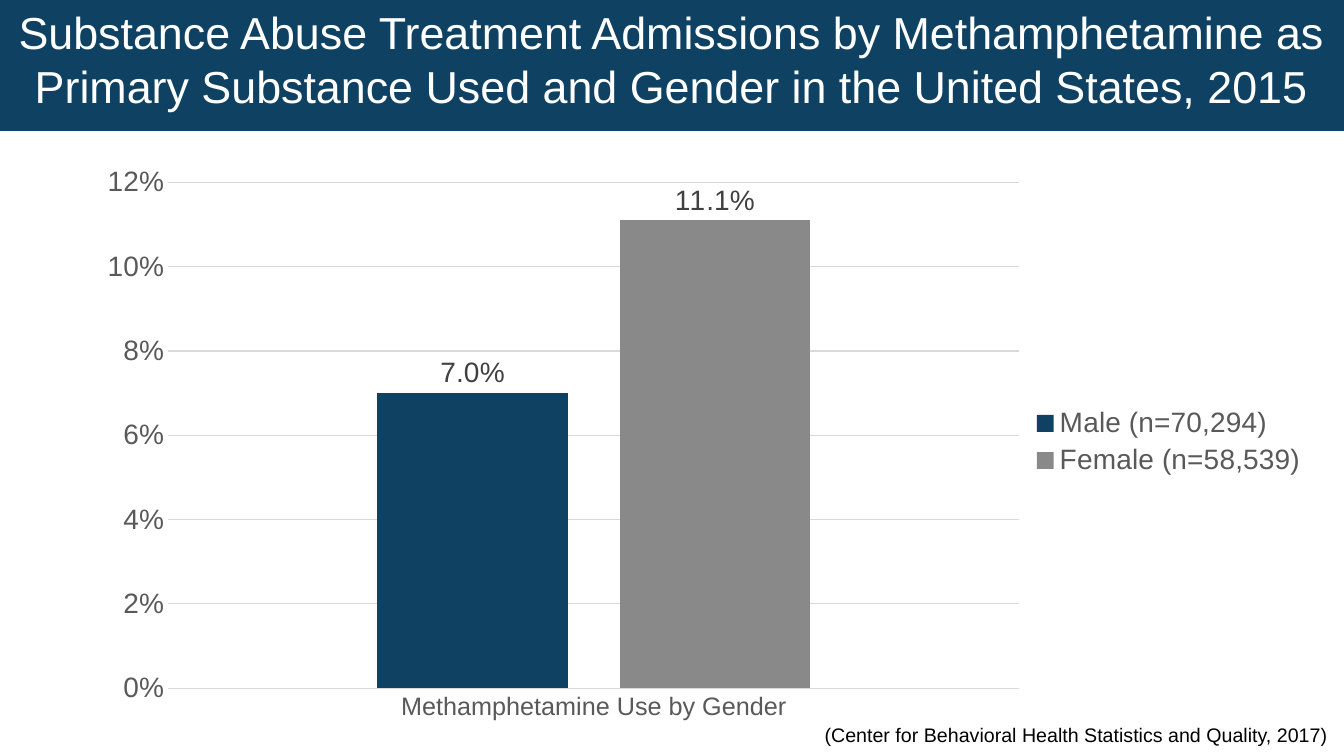
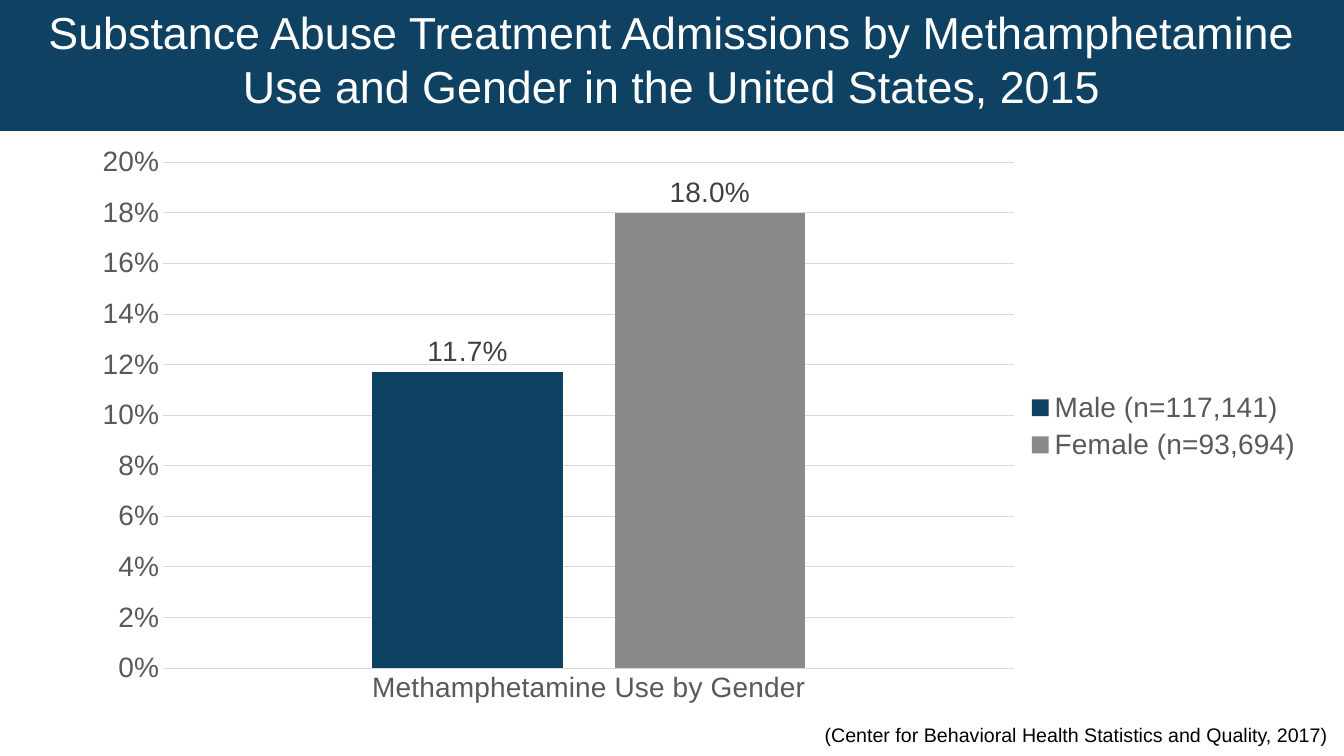
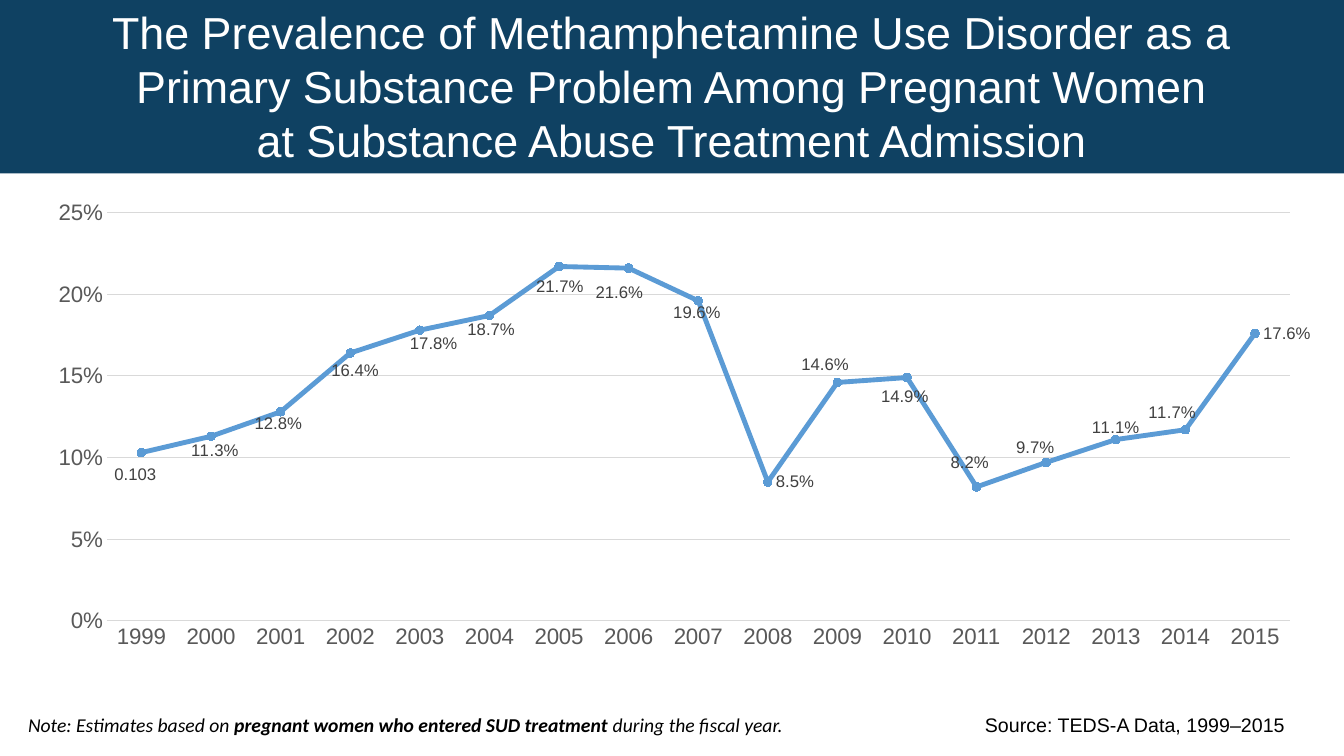
from lxml import etree
from pptx import Presentation
from pptx.chart.data import CategoryChartData
from pptx.dml.color import RGBColor
from pptx.enum.chart import (XL_CHART_TYPE, XL_LABEL_POSITION,
                             XL_LEGEND_POSITION, XL_MARKER_STYLE, XL_TICK_MARK)
from pptx.enum.shapes import MSO_SHAPE
from pptx.enum.text import MSO_ANCHOR, PP_ALIGN
from pptx.oxml.ns import qn
from pptx.util import Pt

PX = 9144  # 100 px to the inch
WIDTH, HEIGHT = 1333, 750

NAVY = RGBColor(0x0F, 0x41, 0x62)
GRAY = RGBColor(0x89, 0x89, 0x89)
BLUE = RGBColor(0x5B, 0x9B, 0xD5)
WHITE = RGBColor(0xFF, 0xFF, 0xFF)
BLACK = RGBColor(0, 0, 0)
AXIS = RGBColor(0x59, 0x59, 0x59)
LABEL = RGBColor(0x40, 0x40, 0x40)
GRID = RGBColor(0xD9, 0xD9, 0xD9)

COLUMN = XL_CHART_TYPE.COLUMN_CLUSTERED
LINE = XL_CHART_TYPE.LINE_MARKERS
ABOVE = XL_LABEL_POSITION.OUTSIDE_END
BESIDE = XL_LABEL_POSITION.RIGHT
LEGEND_RIGHT = XL_LEGEND_POSITION.RIGHT
CIRCLE = XL_MARKER_STYLE.CIRCLE
NO_TICK = XL_TICK_MARK.NONE
RECT = MSO_SHAPE.RECTANGLE
TOP = MSO_ANCHOR.TOP
CENTER = PP_ALIGN.CENTER

CITE = "(Center for Behavioral Health Statistics and Quality, 2017)"
RATES = [0.103, 0.113, 0.128, 0.164, 0.178, 0.187, 0.217, 0.216, 0.196,
         0.085, 0.146, 0.149, 0.082, 0.097, 0.111, 0.117, 0.176]
# Label shifts in px from the place to the right of each marker
SHIFTS = {0: (-35, 22), 1: (-28, 14), 2: (-34, 12), 3: (-27, 18),
          4: (-18, 13), 5: (-30, 14), 6: (-31, 20), 7: (-41, 24),
          8: (-33, 12), 10: (-44, -18), 11: (-34, 19), 12: (-34, -24),
          13: (-38, -15), 14: (-32, -12), 15: (-45, -17)}


def set_font(font, size, color, face="Arial"):
    font.size = Pt(size)
    font.name = face
    font.color.rgb = color


def scale(box):
    return [n * PX for n in box]


def add_band(slide, title, height):
    band = slide.shapes.add_shape(RECT, *scale((0, 0, WIDTH, height)))
    band.shadow.inherit = False
    band.fill.solid()
    band.fill.fore_color.rgb = NAVY
    band.line.fill.background()
    frame = band.text_frame
    frame.word_wrap = True
    frame.vertical_anchor = TOP
    para = frame.paragraphs[0]
    para.text = title
    para.alignment = CENTER
    set_font(para.font, 32, WHITE)


def add_note(slide, box, parts, face="Arial"):
    """Add a line of text; every second part is bold."""
    frame = slide.shapes.add_textbox(*scale(box)).text_frame
    frame.word_wrap = True
    para = frame.paragraphs[0]
    for i, part in enumerate(parts):
        run = para.add_run()
        run.text = part
        if i % 2:
            run.font.bold = True
    set_font(para.font, 14, BLACK, face)
    return para


def make_layout(**values):
    layout = etree.Element(qn("c:layout"))
    manual = etree.SubElement(layout, qn("c:manualLayout"))
    for tag, value in values.items():
        etree.SubElement(manual, qn("c:" + tag)).set("val", str(value))
    return layout


def place_plot(chart, box, plot):
    area = chart._chartSpace.chart.plotArea
    for old in area.findall(qn("c:layout")):
        area.remove(old)
    x, y, w, h = plot
    wide, high = box[2:]
    area.insert(0, make_layout(layoutTarget="inner", xMode="edge",
                               yMode="edge", x=x / wide, y=y / high,
                               w=w / wide, h=h / high))


def style_axes(chart, sizes, top, step):
    cat, val = chart.category_axis, chart.value_axis
    for axis, size in zip((cat, val), sizes):
        axis.major_tick_mark = axis.minor_tick_mark = NO_TICK
        set_font(axis.tick_labels.font, size, AXIS)
    val.minimum_scale, val.maximum_scale, val.major_unit = 0, top, step
    val.tick_labels.number_format = "0%"
    val.tick_labels.number_format_is_linked = False
    val.has_major_gridlines = True
    val.format.line.fill.background()
    for line in (cat.format.line, val.major_gridlines.format.line):
        line.color.rgb = GRID
        line.width = Pt(0.75)


def add_labels(series, size, place):
    labels = series.data_labels
    labels.show_value = True
    labels.number_format = "0.0%"
    labels.number_format_is_linked = False
    labels.position = place
    set_font(labels.font, size, LABEL)
    for lead in series._element.iter(qn("c:showLeaderLines")):
        lead.set("val", "0")


def add_chart(slide, kind, box, plot, cats, rows, sizes, top, step):
    data = CategoryChartData(number_format="0.0%")
    data.categories = cats
    for name, values in rows:
        data.add_series(name, values)
    chart = slide.shapes.add_chart(kind, *scale(box), data).chart
    set_font(chart.font, 10, AXIS)
    chart.has_title = False
    chart.has_legend = False
    chart.plots[0].vary_by_categories = False
    place_plot(chart, box, plot)
    style_axes(chart, sizes, top, step)
    return chart


def add_columns(slide, box, plot, rows, sizes, top):
    cats = ["Methamphetamine Use by Gender"]
    chart = add_chart(slide, COLUMN, box, plot, cats, rows, sizes, top, 0.02)
    bars = chart.plots[0]
    bars.gap_width, bars.overlap = 219, -27
    for series, color in zip(bars.series, (NAVY, GRAY)):
        series.format.fill.solid()
        series.format.fill.fore_color.rgb = color
        add_labels(series, 20, ABOVE)
    chart.has_legend = True
    chart.legend.position = LEGEND_RIGHT
    chart.legend.include_in_layout = False
    set_font(chart.legend.font, 20, AXIS)


def shift_label(label, shift, box, text=None):
    if text:
        label.text_frame.text = text
        set_font(label.text_frame.paragraphs[0].runs[0].font, 12, LABEL)
    else:
        set_font(label.font, 12, LABEL)
    label.position = BESIDE
    x, y = shift
    label._get_or_add_dLbl().insert(
        1, make_layout(x=x / box[2], y=y / box[3]))


def add_trend(slide, box, plot):
    years = [str(year) for year in range(1999, 2016)]
    chart = add_chart(slide, LINE, box, plot, years, [("Series 1", RATES)],
                      (16, 16), 0.25, 0.05)
    series = chart.plots[0].series[0]
    series.smooth = False
    series.format.line.color.rgb = BLUE
    series.format.line.width = Pt(3.5)
    mark = series.marker
    mark.style, mark.size = CIRCLE, 6
    mark.format.fill.solid()
    mark.format.fill.fore_color.rgb = BLUE
    mark.format.line.color.rgb = BLUE
    add_labels(series, 12, BESIDE)
    for i, shift in SHIFTS.items():
        text = "0.103" if i == 0 else None
        shift_label(series.points[i].data_label, shift, box, text)


def main():
    deck = Presentation()
    deck.slide_width, deck.slide_height = scale((WIDTH, HEIGHT))
    blank = deck.slide_layouts[6]

    genders = [
        ("Substance Abuse Treatment Admissions by Methamphetamine as "
         "Primary Substance Used and Gender in the United States, 2015",
         (79, 143, 1228, 591), (88, 38, 844, 502),
         [("Male (n=70,294)", [0.07]), ("Female (n=58,539)", [0.111])],
         (18, 20), 0.12),
        ("Substance Abuse Treatment Admissions by Methamphetamine "
         "Use and Gender in the United States, 2015",
         (74, 126, 1228, 594), (88, 35, 844, 502),
         [("Male (n=117,141)", [0.117]), ("Female (n=93,694)", [0.18])],
         (20, 20), 0.2),
    ]
    for title, *chart in genders:
        slide = deck.slides.add_slide(blank)
        add_columns(slide, *chart)
        add_band(slide, title, 130)
        add_note(slide, (808, 712, 525, 34), [CITE])

    slide = deck.slides.add_slide(blank)
    add_trend(slide, (40, 61, 1260, 639), (66, 150, 1178, 405))
    note = add_note(slide, (18, 702, 940, 34),
                    ["Note: Estimates based on ",
                     "pregnant women who entered SUD treatment ",
                     "during the fiscal year."], "Calibri")
    note.font.italic = True
    add_note(slide, (967, 702, 333, 34), ["Source: TEDS-A Data, 1999–2015"])
    add_band(slide, "The Prevalence of Methamphetamine Use Disorder as a\v"
             "Primary Substance Problem Among Pregnant Women\v"
             "at Substance Abuse Treatment Admission", 172)

    deck.save("out.pptx")


if __name__ == "__main__":
    main()
